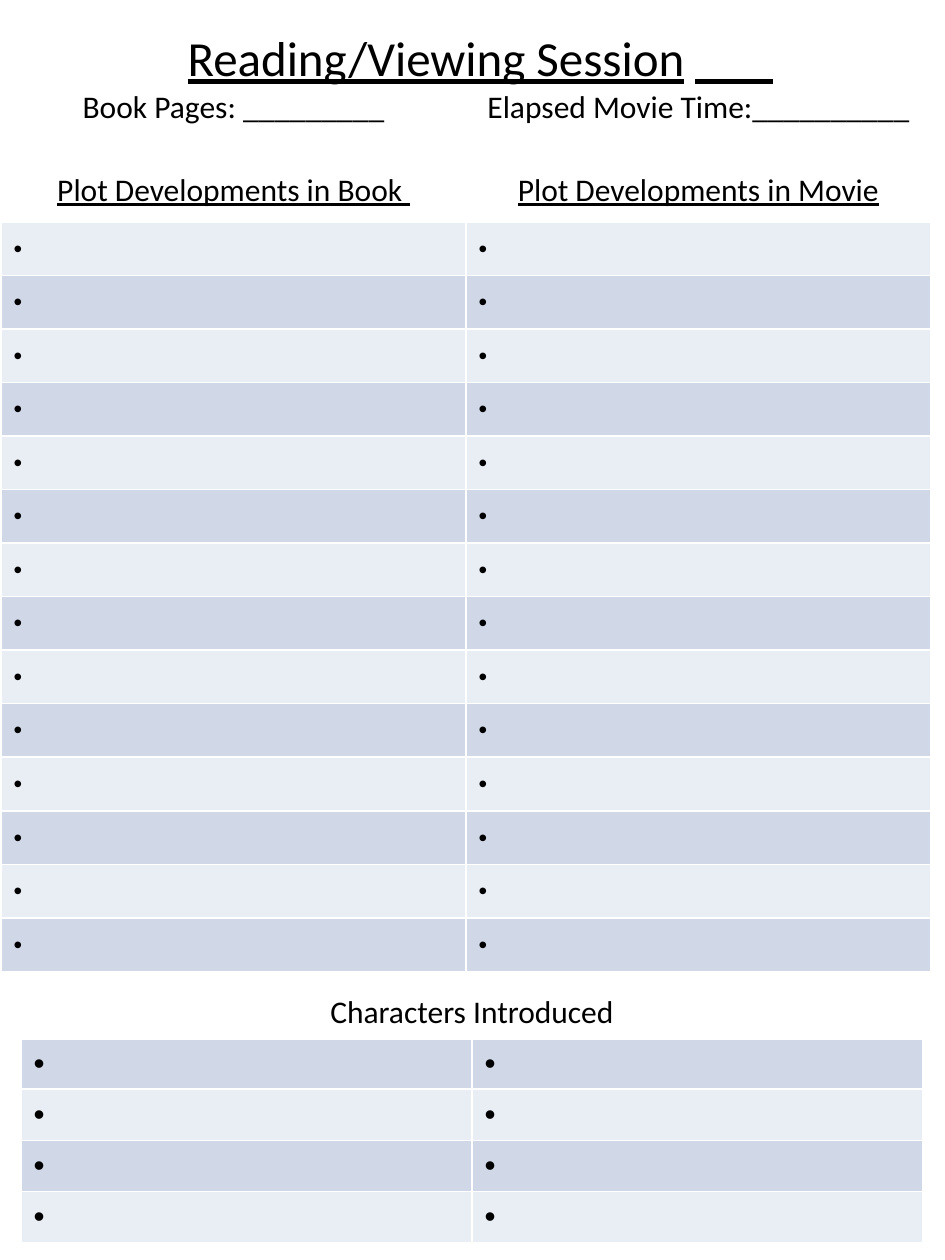
from dataclasses import dataclass

from lxml.etree import SubElement
from pptx import Presentation
from pptx.dml.color import RGBColor as Rgb
from pptx.enum.text import MSO_ANCHOR as Anchor, MSO_AUTO_SIZE as AutoSize, PP_ALIGN as Align
from pptx.oxml import parse_xml
from pptx.oxml.ns import nsdecls, qn
from pptx.util import Emu, Pt

PX_PER_INCH = 126


@dataclass(frozen=True)
class Theme:
    """Colours, font and type sizes of the worksheet."""
    font: str = "Calibri"
    ink: str = "000000"
    paper: str = "FFFFFF"
    pale: str = "E9EDF4"
    deep: str = "D0D8E8"
    title: int = 28
    heading: int = 18
    plot_bullet: int = 14
    character_bullet: int = 18


THEME = Theme()


def px(length):
    """Turn pixels into EMU."""
    return Emu(round(length * 914400 / PX_PER_INCH))


def apply(target, formats):
    """Set every attribute named in formats on target."""
    for name, value in formats.items():
        setattr(target, name, value)


def write(paragraph, text, size, underline=False):
    """Add a formatted run to paragraph."""
    run = paragraph.add_run()
    run.text = text
    apply(run.font, {"name": THEME.font, "size": Pt(size), "bold": False, "underline": underline})
    run.font.color.rgb = Rgb.from_string(THEME.ink)


def style_cell(cell, fill, bottom=1):
    """Give cell its fill and white borders."""
    cell.vertical_anchor = Anchor.MIDDLE
    cell.fill.solid()
    cell.fill.fore_color.rgb = Rgb.from_string(fill)
    properties = cell._tc.get_or_add_tcPr()
    for index, (side, points) in enumerate({"L": 1, "R": 1, "T": 1, "B": bottom}.items()):
        properties.insert(index, parse_xml(
            f'<a:ln{side} {nsdecls("a")} w="{Pt(points)}"><a:solidFill>'
            f'<a:srgbClr val="{THEME.paper}"/></a:solidFill></a:ln{side}>'))


def heading_cell(cell, text, underline=False, bottom=1):
    """Fill cell with a centred heading."""
    style_cell(cell, THEME.paper, bottom)
    heading = cell.text_frame.paragraphs[0]
    heading.alignment = Align.CENTER
    write(heading, text, THEME.heading, underline)


def bullet_cell(cell, fill, size):
    """Fill cell with one blank bullet entry."""
    style_cell(cell, fill)
    entry = cell.text_frame.paragraphs[0]
    properties = entry._p.get_or_add_pPr()
    apply_indent = {"marL": "285750", "indent": "-285750"}
    for name, value in apply_indent.items():
        properties.set(name, value)
    SubElement(properties, qn("a:buFont"), typeface="Arial")
    SubElement(properties, qn("a:buChar"), char="•")
    write(entry, " ", size)


def add_grid(slide, box, heading_heights, entry_count):
    """Place a two-column table whose entry rows share the height left in box."""
    left, top, width, height = box
    grid = slide.shapes.add_table(len(heading_heights) + entry_count, 2,
                                  *map(px, box)).table
    apply(grid, {"first_row": False, "horz_banding": False})
    entry_height = (height - sum(heading_heights)) / entry_count
    for row, row_height in zip(grid.rows, heading_heights + [entry_height] * entry_count):
        row.height = px(row_height)
    for column in grid.columns:
        column.width = px(width / 2)
    return grid


def fill_entries(grid, first_row, fills, size):
    """Put banded bullet entries in every row from first_row on."""
    for index in range(first_row, len(grid.rows)):
        for column in range(2):
            bullet_cell(grid.cell(index, column), fills[(index - first_row) % 2], size)


def add_plot(slide, box):
    """Build the table that compares the plot of book and movie."""
    grid = add_grid(slide, box, [102, 63], 14)
    sources = [("Book Pages: _________", "Plot Developments in Book "),
               ("Elapsed Movie Time:__________", "Plot Developments in Movie")]
    for column, (extent, developments) in enumerate(sources):
        heading_cell(grid.cell(0, column), extent, bottom=3)
        heading_cell(grid.cell(1, column), developments, underline=True)
    fill_entries(grid, 2, (THEME.pale, THEME.deep), THEME.plot_bullet)


def add_characters(slide, box):
    """Build the table of characters introduced."""
    grid = add_grid(slide, box, [51], 4)
    grid.cell(0, 0).merge(grid.cell(0, 1))
    heading_cell(grid.cell(0, 0), "Characters Introduced", bottom=3)
    fill_entries(grid, 1, (THEME.deep, THEME.pale), THEME.character_bullet)


def add_session_title(slide, box):
    """Place the session title, with its underlined blank, in front of the tables."""
    title = slide.shapes.title
    apply(title, dict(zip(("left", "top", "width", "height"), map(px, box))))
    slide.shapes._spTree.append(title._element)
    apply(title.text_frame, {"word_wrap": False, "vertical_anchor": Anchor.TOP,
                             "auto_size": AutoSize.SHAPE_TO_FIT_TEXT})
    session = title.text_frame.paragraphs[0]
    session.alignment = Align.LEFT
    for text, underline in (("Reading/Viewing Session", True), (" ", False), ("       ", True)):
        write(session, text, THEME.title, underline)


def main():
    """Build and save the worksheet."""
    deck = Presentation()
    apply(deck, {"slide_width": px(945), "slide_height": px(1260)})
    slide = deck.slides.add_slide(deck.slide_layouts.get_by_name("Title Only"))
    add_plot(slide, (1, 57, 930, 915))
    add_characters(slide, (21, 987, 902, 255))
    add_session_title(slide, (175, 21, 617, 72))
    deck.save("out.pptx")


if __name__ == "__main__":
    main()
